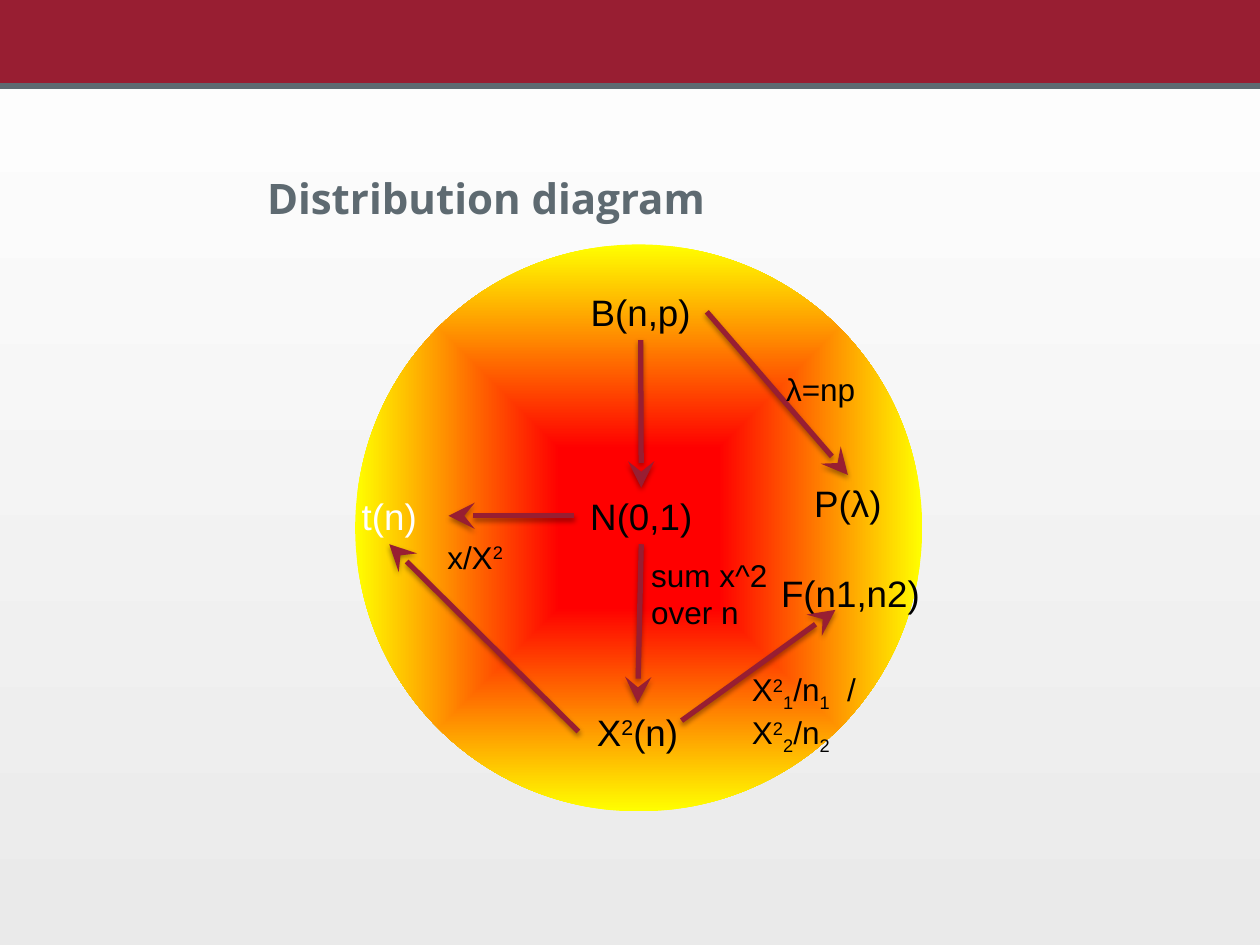
from copy import deepcopy
from dataclasses import dataclass

from lxml import etree
from pptx import Presentation
from pptx.dml.color import RGBColor
from pptx.enum import shapes, text
from pptx.oxml import parse_xml
from pptx.oxml.ns import nsdecls, qn
from pptx.util import Pt

TOP, LEFT, BOTTOM, RIGHT = range(4)
CENTER, ALIGN_LEFT, ALIGN_RIGHT = text.PP_ALIGN.CENTER, text.PP_ALIGN.LEFT, text.PP_ALIGN.RIGHT


@dataclass(frozen=True)
class Theme:
    crimson: str = "981E32"
    slate: str = "5E6A71"
    black: str = "000000"
    white: str = "FFFFFF"
    pale: str = "EAEAEA"
    red: str = "FF0000"
    yellow: str = "FFFF00"
    title_font: str = "Open Sans"
    body_font: str = "Arial"
    title_size: int = 24
    node_size: int = 21
    label_size: int = 18
    line_width: int = 3
    superscript: int = 30000
    subscript: int = -25000


class Diagram:
    def __init__(self, slide, theme):
        self.slide, self.theme = slide, theme

    def background(self):
        fill = self.slide.background.fill
        fill.gradient()
        fill.gradient_angle = 90
        for stop, color in zip(fill.gradient_stops, (self.theme.pale, self.theme.white)):
            stop.color.rgb = RGBColor.from_string(color)

    def shape(self, kind, left, top, width, height, color):
        shape = self.slide.shapes.add_shape(kind, Pt(left), Pt(top), Pt(width), Pt(height))
        shape.shadow.inherit = False
        shape.line.fill.background()
        shape.fill.solid()
        shape.fill.fore_color.rgb = RGBColor.from_string(color)
        return shape

    def glowing_circle(self, left, top, size):
        circle = self.shape(shapes.MSO_SHAPE.OVAL, left, top, size, size, self.theme.red)
        circle.fill.gradient()
        gradient = circle._element.spPr.find(qn("a:gradFill"))
        stop_list = gradient.find(qn("a:gsLst"))
        stop_list.insert(1, deepcopy(stop_list[0]))
        colors = (self.theme.red, self.theme.red, self.theme.yellow)
        for stop, position, color in zip(circle.fill.gradient_stops, (0, 0.28, 1), colors):
            stop.position = position
            stop.color.rgb = RGBColor.from_string(color)
        gradient.replace(gradient.find(qn("a:lin")), parse_xml(
            f'<a:path {nsdecls("a")} path="shape">'
            '<a:fillToRect l="50000" t="50000" r="50000" b="50000"/></a:path>'))

    def textbox(self, left, top, width, height, lines, size, color, align, wrap=True):
        """Each line is a list of runs: plain text, or (text, baseline)."""
        box = self.slide.shapes.add_textbox(Pt(left), Pt(top), Pt(width), Pt(height))
        frame = box.text_frame
        frame.word_wrap = wrap
        for index, runs in enumerate(lines):
            paragraph = frame.add_paragraph() if index else frame.paragraphs[0]
            paragraph.alignment = align
            font = paragraph.font
            font.name, font.size = self.theme.body_font, Pt(size)
            font.color.rgb = RGBColor.from_string(color)
            for content in runs:
                content, baseline = (content, 0) if isinstance(content, str) else content
                run = paragraph.add_run()
                run.text = content
                if baseline:
                    run.font._element.set("baseline", str(baseline))
        return box

    def title(self, left, top, width, height, content):
        box = self.textbox(left, top, width, height, [[content]],
                           self.theme.title_size, self.theme.slate, ALIGN_LEFT)
        frame = box.text_frame
        frame.vertical_anchor = text.MSO_ANCHOR.BOTTOM
        frame.margin_left = frame.margin_right = Pt(36)
        paragraph = frame.paragraphs[0]
        paragraph.line_spacing = 0.9
        paragraph.font.name, paragraph.font.bold = self.theme.title_font, True

    def node(self, left, top, width, runs, color=None):
        return self.textbox(left, top, width, 32.4, [runs], self.theme.node_size,
                            color or self.theme.black, CENTER, wrap=False)

    def label(self, left, top, width, height, lines, align=ALIGN_LEFT):
        self.textbox(left, top, width, height, lines, self.theme.label_size,
                     self.theme.black, align)

    def line(self, start, end, color):
        connector = self.slide.shapes.add_connector(
            shapes.MSO_CONNECTOR.STRAIGHT, *(Pt(value) for value in (*start, *end)))
        connector.line.color.rgb = RGBColor.from_string(color)
        connector.line.width = Pt(self.theme.line_width)
        etree.SubElement(connector._element.spPr, qn("a:effectLst"))
        return connector

    def arrow(self, start=(0, 0), end=(0, 0), source=None, target=None):
        """Join source and target, each a (node, side), or run between two points."""
        connector = self.line(start, end, self.theme.crimson)
        if source:
            connector.begin_connect(*source)
        if target:
            connector.end_connect(*target)
        etree.SubElement(connector.line._get_or_add_ln(), qn("a:tailEnd"),
                         type="stealth", w="lg", len="lg")
        effects = connector._element.spPr.find(qn("a:effectLst"))
        effects.append(parse_xml(
            f'<a:outerShdw {nsdecls("a")} blurRad="{Pt(3.1)}" dist="{Pt(1.6)}" dir="5400000" '
            f'rotWithShape="0"><a:srgbClr val="{self.theme.black}">'
            '<a:alpha val="38000"/></a:srgbClr></a:outerShdw>'))


def main():
    presentation = Presentation()
    presentation.slide_width, presentation.slide_height = Pt(720), Pt(540)
    slide = presentation.slides.add_slide(presentation.slide_layouts[6])
    theme = Theme()
    diagram = Diagram(slide, theme)
    squared = ("2", theme.superscript)
    sub_one, sub_two = ("1", theme.subscript), ("2", theme.subscript)

    # Background, header band and title
    diagram.background()
    diagram.shape(shapes.MSO_SHAPE.RECTANGLE, 0, 0, 720, 48.2, theme.crimson)
    diagram.line((0, 49.2), (720, 49.2), theme.slate)
    diagram.glowing_circle(203, 139.7, 324)
    diagram.title(116.6, 77, 486, 54, "Distribution diagram")

    # Distributions
    normal = diagram.node(328.3, 278.6, 76.3, ["N(0,1)"])
    binomial = diagram.node(328.3, 162, 75.6, ["B(n,p)"])
    poisson = diagram.node(450.7, 271.4, 67.7, ["P(λ)"])
    student = diagram.node(188.6, 278.6, 67.7, ["t(n)"], theme.white)
    chi_square = diagram.node(330.5, 401.8, 67.7, ["X", squared, "(n)"])
    diagram.node(439.2, 322.6, 93.6, ["F(n1,n2)"])

    # Arrows between distributions
    for source, target in (
        ((binomial, RIGHT), (poisson, TOP)),
        ((binomial, BOTTOM), (normal, TOP)),
        ((normal, BOTTOM), (chi_square, TOP)),
        ((chi_square, LEFT), (student, BOTTOM)),
        ((normal, LEFT), (student, RIGHT)),
    ):
        diagram.arrow(source=source, target=target)
    diagram.arrow((389.5, 411.8), (477.4, 348.5))

    # Arrow labels
    diagram.label(365, 313.9, 90, 51, [["sum x^2"], ["over n"]])
    diagram.label(422.6, 379.4, 142.6, 51, [
        ["X", squared, sub_one, "/n", sub_one, "  /"],
        ["X", squared, sub_two, "/n", sub_two],
    ])
    diagram.label(241.2, 303.8, 53.3, 28.8, [["x/X", squared]], ALIGN_RIGHT)
    diagram.label(442.1, 208.1, 90, 28.8, [["λ=np"]])

    presentation.save("out.pptx")


if __name__ == "__main__":
    main()
